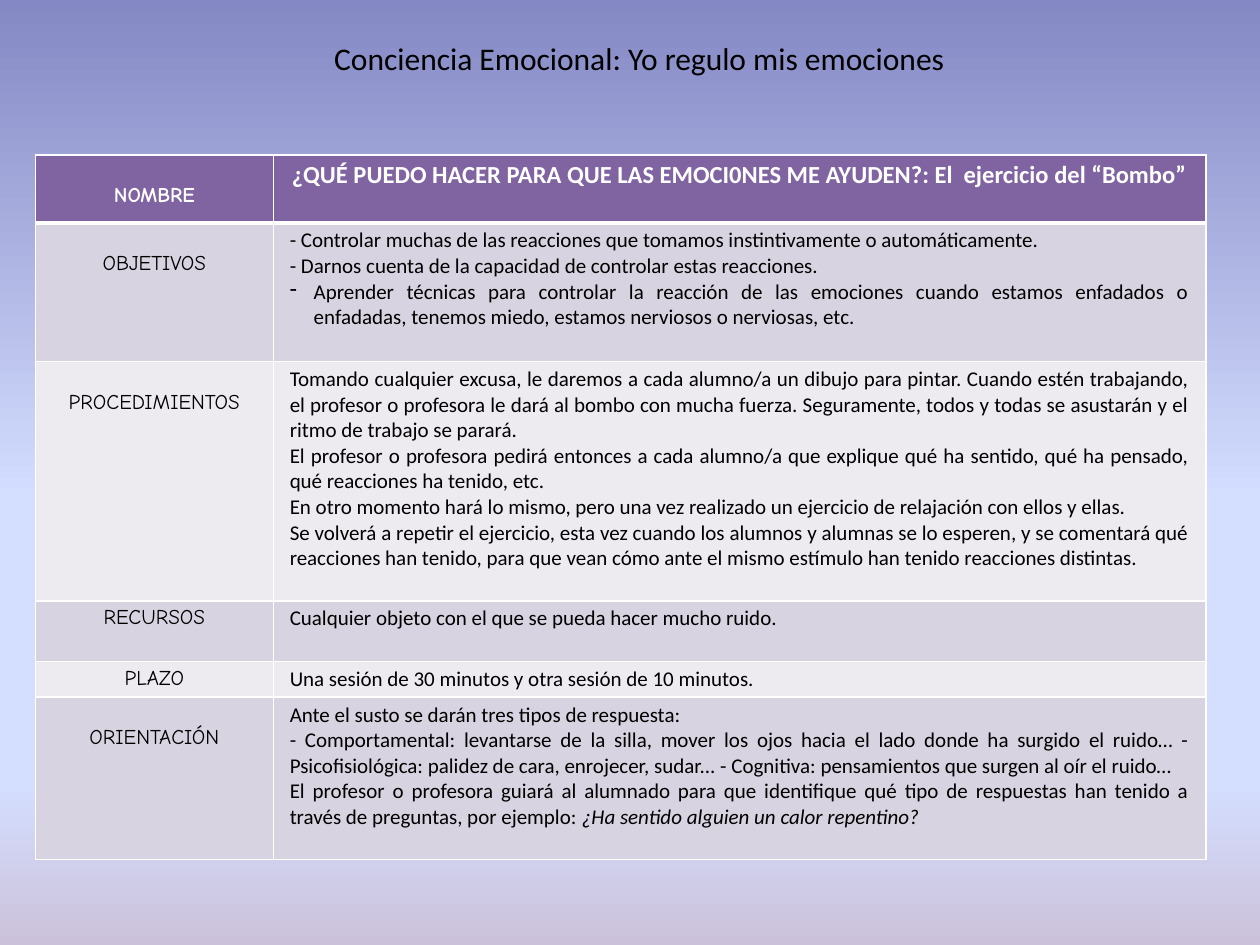
import pptx
import pptx.dml.color
import pptx.enum.text
import pptx.oxml
import pptx.oxml.ns
import pptx.util
from pptx.util import Inches

ALIGN = pptx.enum.text.PP_ALIGN
NAMESPACE = pptx.oxml.ns.nsdecls("a")
LABEL_FONT, BODY_FONT = "Comic Neue", "Calibri"
HEADER_FILL, BAND_FILLS = "8064A2", ("EDEAF0", "D8D3E0")
BACKGROUND_STOPS = [(0, "8488C4"), (53, "D4DEFF"), (83, "D4DEFF"), (100, "CCC1DA")]


def rgb(value):
    return pptx.dml.color.RGBColor.from_string(value)


def add_run(paragraph, text, font, size, color="000000", bold=False, italic=False):
    run = paragraph.add_run()
    run.text = text
    run.font.name = font
    run.font.size = pptx.util.Pt(size)
    run.font.bold = bold
    run.font.italic = italic
    run.font.color.rgb = rgb(color)


# Each row: label, whether the label sits one line lower, height, paragraphs of runs
ROWS = [
    ("NOMBRE", True, 0.54, [
        ["¿QUÉ PUEDO HACER PARA QUE LAS EMOCI0NES ME AYUDEN?: El  ejercicio del “Bombo”"],
    ]),
    ("OBJETIVOS", True, 1.1, [
        ["- Controlar muchas de las reacciones que tomamos instintivamente o automáticamente."],
        ["- Darnos cuenta de la capacidad de controlar estas reacciones."],
        ["Aprender técnicas para controlar la reacción de las emociones cuando estamos "
         "enfadados o enfadadas, tenemos miedo, estamos nerviosos o nerviosas, etc."],
    ]),
    ("PROCEDIMIENTOS", True, 1.9, [
        ["Tomando cualquier excusa, le daremos a cada alumno/a un dibujo para pintar. Cuando "
         "estén trabajando, el profesor o profesora le dará al bombo con mucha fuerza. "
         "Seguramente, todos y todas se asustarán y el ritmo de trabajo se parará."],
        ["El profesor o profesora pedirá entonces a cada alumno/a que explique qué ha sentido, "
         "qué ha pensado, qué reacciones ha tenido, etc."],
        ["En otro momento hará lo mismo, pero una vez realizado un ejercicio de relajación "
         "con ellos y ellas."],
        ["Se volverá a repetir el ejercicio, esta vez cuando los alumnos y alumnas se lo "
         "esperen, y se comentará qué reacciones han tenido, para que vean cómo ante el mismo "
         "estímulo han tenido reacciones distintas."],
    ]),
    ("RECURSOS", False, 0.48, [
        ["Cualquier objeto con el que se pueda hacer mucho ruido."],
    ]),
    ("PLAZO", False, 0.28, [
        ["Una sesión de 30 minutos y otra sesión de 10 minutos."],
    ]),
    ("ORIENTACIÓN", True, 1.29, [
        ["Ante el susto se darán tres tipos de respuesta:"],
        ["- Comportamental: levantarse de la silla, mover los ojos hacia el lado donde ha "
         "surgido el ruido… - Psicofisiológica: palidez de cara, enrojecer, sudar... - "
         "Cognitiva: pensamientos que surgen al oír el ruido…"],
        ["El profesor o profesora guiará al alumnado para que identifique qué tipo de "
         "respuestas han tenido a través de preguntas, por ejemplo: ",
         "¿Ha sentido alguien un calor repentino?"],
    ]),
]

presentation = pptx.Presentation()
presentation.slide_width, presentation.slide_height = Inches(10), Inches(7.5)
slide = presentation.slides.add_slide(presentation.slide_layouts[5])

# Background: vertical gradient with four stops
background = slide.background.fill
background.gradient()
background.gradient_angle = 270
stop_list = slide.element.find(".//" + pptx.oxml.ns.qn("a:gsLst"))
for stop in list(stop_list):
    stop_list.remove(stop)
for position, color in BACKGROUND_STOPS:
    stop_list.append(pptx.oxml.parse_xml(
        f'<a:gs {NAMESPACE} pos="{position * 1000}"><a:srgbClr val="{color}"/></a:gs>'))

# Title
title = slide.shapes.title
title.left, title.top = Inches(2.32), Inches(0.26)
title.width, title.height = Inches(5.51), Inches(0.4)
title.text_frame.word_wrap = True
title.text_frame.vertical_anchor = pptx.enum.text.MSO_ANCHOR.TOP
title_paragraph = title.text_frame.paragraphs[0]
title_paragraph.alignment = ALIGN.CENTER
add_run(title_paragraph, "Conciencia Emocional: Yo regulo mis emociones", BODY_FONT, 18)

# Activity table
table_height = sum(height for _, _, height, _ in ROWS)
table = slide.shapes.add_table(
    len(ROWS), 2, Inches(0.28), Inches(1.23), Inches(9.29), Inches(table_height)).table
table.columns[0].width, table.columns[1].width = Inches(1.89), Inches(7.4)

for row_index, (label, lowered, height, paragraphs) in enumerate(ROWS):
    table.rows[row_index].height = Inches(height)
    is_header = row_index == 0
    text_color = "FFFFFF" if is_header else "000000"
    label_cell, body_cell = table.cell(row_index, 0), table.cell(row_index, 1)

    for cell in (label_cell, body_cell):
        cell.margin_left = cell.margin_right = Inches(0.13)
        cell.margin_top = cell.margin_bottom = Inches(0.04)
        properties = cell._tc.get_or_add_tcPr()
        for side in "LRTB":
            thick = (row_index, side) in ((0, "B"), (1, "T"))
            width = pptx.util.Pt(3 if thick else 1)
            properties.append(pptx.oxml.parse_xml(
                f'<a:ln{side} {NAMESPACE} w="{width}"><a:solidFill>'
                f'<a:srgbClr val="FFFFFF"/></a:solidFill></a:ln{side}>'))
        cell.fill.solid()
        cell.fill.fore_color.rgb = rgb(HEADER_FILL if is_header else BAND_FILLS[row_index % 2])

    if lowered:
        label_cell.margin_top = Inches(0.23)
    label_paragraph = label_cell.text_frame.paragraphs[0]
    label_paragraph.alignment = ALIGN.CENTER
    add_run(label_paragraph, label, LABEL_FONT, 12, text_color, bold=is_header)

    frame = body_cell.text_frame
    for index, runs in enumerate(paragraphs):
        paragraph = frame.add_paragraph() if index else frame.paragraphs[0]
        paragraph.alignment = ALIGN.CENTER if is_header else ALIGN.JUSTIFY
        for run_index, text in enumerate(runs):
            add_run(paragraph, text, BODY_FONT, 14 if is_header else 12, text_color,
                    bold=is_header, italic=run_index == 1)

# The last objective carries a hanging dash bullet
bullet_properties = table.cell(1, 1).text_frame.paragraphs[2]._p.get_or_add_pPr()
bullet_properties.set("marL", str(Inches(0.19)))
bullet_properties.set("indent", str(-Inches(0.19)))
bullet_properties.append(pptx.oxml.parse_xml(f'<a:buChar {NAMESPACE} char="-"/>'))

presentation.save("out.pptx")
